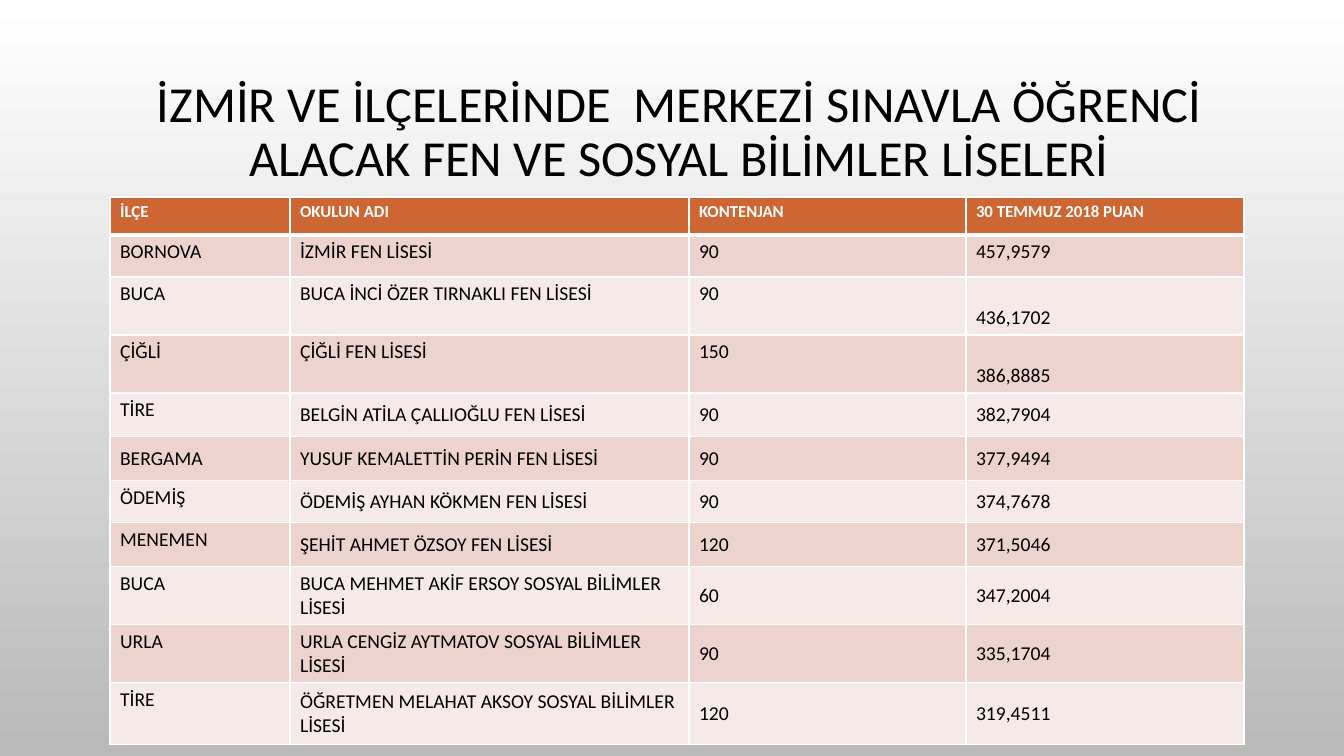
from lxml.etree import SubElement
from pptx import Presentation
from pptx.dml.color import RGBColor
from pptx.enum.text import MSO_ANCHOR, PP_ALIGN
from pptx.oxml.ns import qn
from pptx.util import Emu, Pt

SLIDE_WIDTH, SLIDE_HEIGHT = 1344, 756
EMU_PER_PX = 12192000 / SLIDE_WIDTH
ANCHORS = {"t": MSO_ANCHOR.TOP, "m": MSO_ANCHOR.MIDDLE, "b": MSO_ANCHOR.BOTTOM}

TITLE = "İZMİR VE İLÇELERİNDE  MERKEZİ SINAVLA ÖĞRENCİ ALACAK FEN VE SOSYAL BİLİMLER LİSELERİ"
COLUMN_WIDTHS = [180, 399, 277, 278]
SCHOOL_ROWS = [
    (38, "tttt", ["İLÇE", "OKULUN ADI", "KONTENJAN", "30 TEMMUZ 2018 PUAN"]),
    (42, "tttt", ["BORNOVA", "İZMİR FEN LİSESİ", "90", "457,9579"]),
    (58, "tttb", ["BUCA", "BUCA İNCİ ÖZER TIRNAKLI FEN LİSESİ", "90", "436,1702"]),
    (58, "tttb", ["ÇİĞLİ", "ÇİĞLİ FEN LİSESİ", "150", "386,8885"]),
    (44, "tmmm", ["TİRE", "BELGİN ATİLA ÇALLIOĞLU FEN LİSESİ", "90", "382,7904"]),
    (44, "mmmm", ["BERGAMA", "YUSUF KEMALETTİN PERİN FEN LİSESİ", "90", "377,9494"]),
    (42, "tmmm", ["ÖDEMİŞ", "ÖDEMİŞ AYHAN KÖKMEN FEN LİSESİ", "90", "374,7678"]),
    (44, "tmmm", ["MENEMEN", "ŞEHİT AHMET ÖZSOY FEN LİSESİ", "120", "371,5046"]),
    (58, "tmmm", ["BUCA", "BUCA MEHMET AKİF ERSOY SOSYAL BİLİMLER LİSESİ", "60", "347,2004"]),
    (58, "tmmm", ["URLA", "URLA CENGİZ AYTMATOV SOSYAL BİLİMLER LİSESİ", "90", "335,1704"]),
    (62, "tmmm", ["TİRE", "ÖĞRETMEN MELAHAT AKSOY SOSYAL BİLİMLER LİSESİ", "120", "319,4511"]),
]


def px(length):
    return Emu(round(length * EMU_PER_PX))


def color(hex_value):
    return RGBColor.from_string(hex_value)


class SlideBuilder:
    font_name = "Calibri"
    text_color = "000000"
    header_text_color = "FFFFFF"
    header_fill = "CE6633"
    band_fills = ["F6EAE8", "EDD3CE"]
    border_color = "FFFFFF"

    def __init__(self, slide):
        self.slide = slide

    def background(self, top_color, bottom_color):
        fill = self.slide.background.fill
        fill.gradient()
        fill.gradient_angle = 270
        for stop, position, hex_value in zip(fill.gradient_stops, (0, 1), (top_color, bottom_color)):
            stop.position = position
            stop.color.rgb = color(hex_value)

    def run(self, paragraph, text, size, hex_value, bold=False):
        run = paragraph.add_run()
        run.text = text
        run.font.name = self.font_name
        run.font.size = Pt(size)
        run.font.bold = bold
        run.font.color.rgb = color(hex_value)

    def title(self, left, top, width, height, text):
        shape = self.slide.shapes.add_textbox(px(left), px(top), px(width), px(height))
        frame = shape.text_frame
        frame.word_wrap = True
        frame.vertical_anchor = MSO_ANCHOR.MIDDLE
        paragraph = frame.paragraphs[0]
        paragraph.alignment = PP_ALIGN.CENTER
        paragraph.line_spacing = 0.9
        self.run(paragraph, text, 36, self.text_color)

    def borders(self, cell, top_width, bottom_width):
        properties = cell._tc.get_or_add_tcPr()
        for side, width in (("lnL", 1), ("lnR", 1), ("lnT", top_width), ("lnB", bottom_width)):
            line = SubElement(properties, qn(f"a:{side}"), w=str(Pt(width)))
            fill = SubElement(line, qn("a:solidFill"))
            SubElement(fill, qn("a:srgbClr"), val=self.border_color)

    def cell(self, cell, row_index, anchor, text):
        is_header = row_index == 0
        self.borders(cell, 3 if row_index == 1 else 1, 3 if is_header else 1)
        cell.fill.solid()
        cell.fill.fore_color.rgb = color(self.header_fill if is_header else self.band_fills[row_index % 2])
        cell.vertical_anchor = ANCHORS[anchor]
        self.run(
            cell.text_frame.paragraphs[0],
            text,
            12 if is_header else 14,
            self.header_text_color if is_header else self.text_color,
            is_header,
        )

    def table(self, left, top, column_widths, rows):
        height = sum(row_height for row_height, _, _ in rows)
        shape = self.slide.shapes.add_table(
            len(rows), len(column_widths), px(left), px(top), px(sum(column_widths)), px(height)
        )
        table = shape.table
        table.horz_banding = False
        for column, width in zip(table.columns, column_widths):
            column.width = px(width)
        for row_index, (row_height, anchors, texts) in enumerate(rows):
            table.rows[row_index].height = px(row_height)
            for column_index, (anchor, text) in enumerate(zip(anchors, texts)):
                self.cell(table.cell(row_index, column_index), row_index, anchor, text)


def main():
    presentation = Presentation()
    presentation.slide_width = px(SLIDE_WIDTH)
    presentation.slide_height = px(SLIDE_HEIGHT)
    builder = SlideBuilder(presentation.slides.add_slide(presentation.slide_layouts[6]))
    builder.background("FFFFFF", "B9B9B9")
    builder.title(116, 68, 1127, 130, TITLE)
    builder.table(110, 197, COLUMN_WIDTHS, SCHOOL_ROWS)
    presentation.save("out.pptx")


if __name__ == "__main__":
    main()
